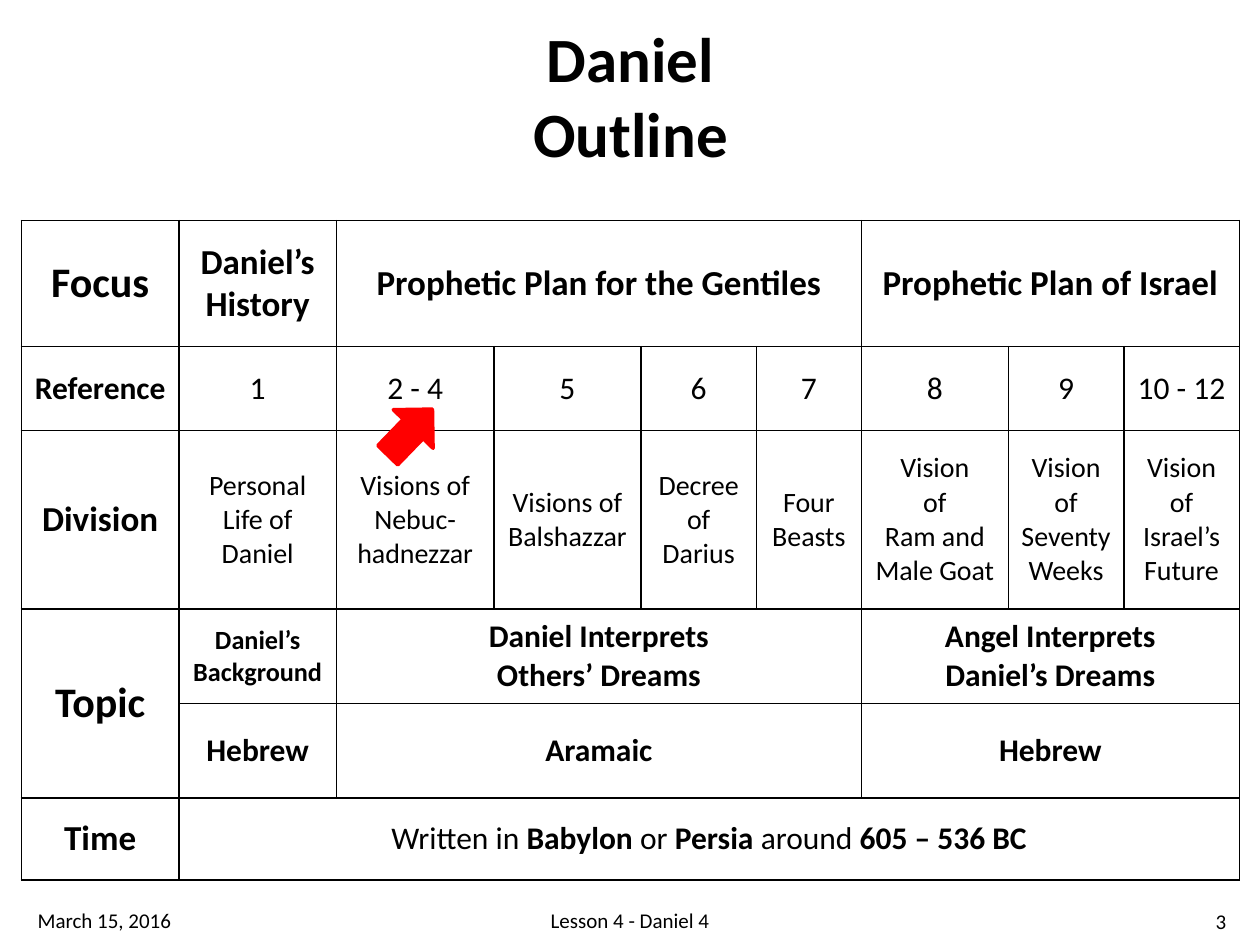
from dataclasses import dataclass

from lxml.etree import SubElement
from pptx import Presentation
from pptx.dml.color import RGBColor
from pptx.enum.shapes import MSO_SHAPE as Shp
from pptx.enum.text import MSO_ANCHOR as Anchor, MSO_AUTO_SIZE as Fit, PP_ALIGN as Align
from pptx.oxml.ns import qn
from pptx.util import Emu, Inches, Pt


@dataclass(frozen=True)
class Theme:
    font: str = "Calibri"
    ink: RGBColor = RGBColor(0, 0, 0)
    accent: RGBColor = RGBColor(255, 0, 0)
    title: int = 36
    label: int = 24
    head: int = 20
    body: int = 18
    detail: int = 16
    small: int = 15
    footer: int = 12
    border: int = 1


@dataclass(frozen=True)
class Entry:
    row: int
    col: int
    text: str
    size: int
    bold: bool = True
    rows: int = 1
    cols: int = 1


@dataclass(frozen=True)
class Label:
    x: float
    y: float
    w: float
    h: float
    text: str
    size: int
    align: Align
    bold: bool = False
    wrap: bool = True


T = Theme()
UNIT = Inches(1) / 12
COLS = (15, 15, 15, 14, 11, 10, 14, 11, 11)
ROWS = (12, 8, 17, 9, 9, 7.8)
REFERENCES = ("1", "2 - 4", "5", "6", "7", "8", "9", "10 - 12")
DIVISIONS = (
    "Personal Life of Daniel", "Visions of Nebuc-hadnezzar", "Visions of Balshazzar",
    "Decree of Darius", "Four Beasts", "Vision\nof\nRam and\nMale Goat",
    "Vision of Seventy Weeks", "Vision of Israel’s Future",
)
ENTRIES = [
    Entry(0, 0, "Focus", T.label),
    Entry(0, 1, "Daniel’s History", T.head),
    Entry(0, 2, "Prophetic Plan for the Gentiles", T.head, cols=4),
    Entry(0, 6, "Prophetic Plan of Israel", T.head, cols=3),
    Entry(1, 0, "Reference", T.body),
    *(Entry(1, c, s, T.body, False) for c, s in enumerate(REFERENCES, 1)),
    Entry(2, 0, "Division", T.head),
    *(Entry(2, c, s, T.detail, False) for c, s in enumerate(DIVISIONS, 1)),
    Entry(3, 0, "Topic", T.label, rows=2),
    Entry(3, 1, "Daniel’s Background", T.small),
    Entry(3, 2, "Daniel Interprets\nOthers’ Dreams", T.body, cols=4),
    Entry(3, 6, "Angel Interprets\nDaniel’s Dreams", T.body, cols=3),
    Entry(4, 1, "Hebrew", T.body),
    Entry(4, 2, "Aramaic", T.body, cols=4),
    Entry(4, 6, "Hebrew", T.body, cols=3),
    Entry(5, 0, "Time", T.head),
    Entry(5, 1, "Written in *Babylon *or *Persia *around *605 – 536 BC", T.body, False, cols=8),
]
LABELS = [
    Label(.412, .013, .177, .175, "Daniel\nOutline", T.title, Align.CENTER, True, False),
    Label(.02, .947, .171, .053, "March 15, 2016", T.footer, Align.LEFT),
    Label(.154, .947, .692, .053, "Lesson 4 - Daniel 4", T.footer, Align.CENTER),
    Label(.908, .948, .075, .053, "3", T.footer, Align.RIGHT),
]


def write(tf, text: str, size: int, bold: bool, align: Align) -> None:
    for i, line in enumerate(text.split("\n")):
        p = tf.add_paragraph() if i else tf.paragraphs[0]
        p.alignment = align
        p.font.name, p.font.size = T.font, Pt(size)
        p.font.color.rgb = T.ink
        parts = line.split("*")
        if len(parts) == 1:
            p.font.bold = bold
        for j, part in enumerate(parts):
            r = p.add_run()
            r.text = part
            if len(parts) > 1:
                r.font.bold = j % 2 == 1


def style_cell(cell) -> None:
    tc_pr = cell._tc.get_or_add_tcPr()
    for side in ("a:lnL", "a:lnR", "a:lnT", "a:lnB"):
        ln = SubElement(tc_pr, qn(side), w=str(Pt(T.border)))
        fill = SubElement(ln, qn("a:solidFill"))
        SubElement(fill, qn("a:srgbClr"), val=str(T.ink))
    cell.fill.background()
    cell.vertical_anchor = Anchor.MIDDLE


def add_outline(s) -> None:
    width, height = (Emu(int(sum(n) * UNIT)) for n in (COLS, ROWS))
    table = s.shapes.add_table(len(ROWS), len(COLS), Inches(.17), Inches(1.75), width, height).table
    table.first_row = table.horz_banding = False
    for col, n in zip(table.columns, COLS):
        col.width = Emu(int(n * UNIT))
    for row, n in zip(table.rows, ROWS):
        row.height = Emu(int(n * UNIT))
    for cell in table.iter_cells():
        style_cell(cell)
    for e in ENTRIES:
        cell = table.cell(e.row, e.col)
        if e.rows * e.cols > 1:
            cell.merge(table.cell(e.row + e.rows - 1, e.col + e.cols - 1))
        write(cell.text_frame, e.text, e.size, e.bold, Align.CENTER)


def add_label(prs, s, label: Label) -> None:
    w, h = prs.slide_width, prs.slide_height
    sp = s.shapes.add_textbox(int(label.x * w), int(label.y * h), int(label.w * w), int(label.h * h))
    tf = sp.text_frame
    tf.word_wrap = label.wrap
    tf.auto_size = Fit.NONE if label.wrap else Fit.SHAPE_TO_FIT_TEXT
    tf.vertical_anchor = Anchor.MIDDLE
    write(tf, label.text, label.size, label.bold, label.align)


def add_pointer(s) -> None:
    sp = s.shapes.add_shape(Shp.RIGHT_ARROW, Inches(3), Inches(3.21), Inches(.51), Inches(.44))
    sp.rotation = 314.1
    sp.shadow.inherit = False
    sp.fill.solid()
    sp.fill.fore_color.rgb = sp.line.color.rgb = T.accent
    sp.line.width = Pt(2)


def main() -> None:
    prs = Presentation()
    prs.slide_width, prs.slide_height = Inches(10), Inches(7.5)
    s = prs.slides.add_slide(prs.slide_layouts[6])
    add_outline(s)
    add_pointer(s)
    for label in LABELS:
        add_label(prs, s, label)
    prs.save("out.pptx")


if __name__ == "__main__":
    main()
